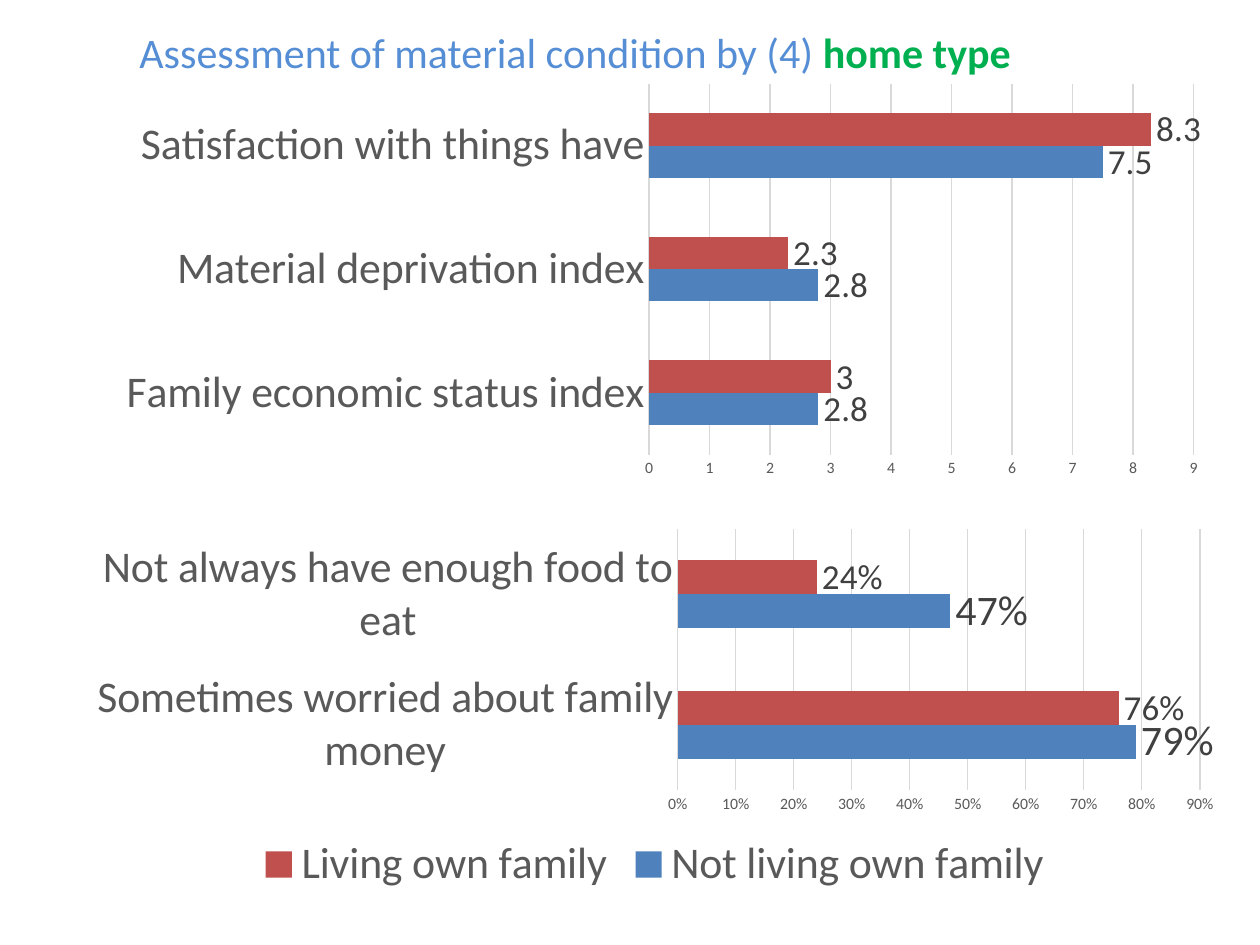
from lxml import etree
from pptx import Presentation
from pptx.chart import data as cd
from pptx.dml.color import RGBColor
from pptx.enum import chart as ce, text as te
from pptx.oxml.ns import qn
from pptx.util import Inches, Pt

FACE = "Calibri"
SKY = RGBColor(0x55, 0x8E, 0xD5)
GREEN = RGBColor(0x00, 0xB0, 0x50)
BLUE = RGBColor(0x4F, 0x81, 0xBD)
RED = RGBColor(0xC0, 0x50, 0x4D)
GREY = RGBColor(0x59, 0x59, 0x59)
DARK = RGBColor(0x40, 0x40, 0x40)
PALE = RGBColor(0xD9, 0xD9, 0xD9)


def style(font, size, color, bold=False):
    """Set the face, size, colour and weight of a font."""
    font.name, font.size, font.bold = FACE, Pt(size), bold
    font.color.rgb = color


def add_text(par, words, **look):
    """Add a formatted run to a paragraph."""
    run = par.add_run()
    run.text = words
    style(run.font, **look)


def place(shape, box):
    """Move a shape to a box given in inches."""
    shape.left, shape.top, shape.width, shape.height = map(Inches, box)


def add_title(slide, box):
    """Fill the title placeholder with its two-colour heading."""
    title = slide.shapes.title
    place(title, box)
    frame = title.text_frame
    frame.word_wrap = True
    frame.auto_size = te.MSO_AUTO_SIZE.NONE
    frame.vertical_anchor = te.MSO_ANCHOR.BOTTOM
    par = frame.paragraphs[0]
    par.alignment = te.PP_ALIGN.CENTER
    add_text(par, "Assessment of material condition by (4) ", size=24, color=SKY)
    add_text(par, "home type", size=24, color=GREEN, bold=True)


def fix_plot(chart, area):
    """Pin the inner plot area to fractions of the chart."""
    plot = chart._chartSpace.chart.plotArea
    for old in plot.findall(qn("c:layout")):
        plot.remove(old)
    layout = etree.Element(qn("c:layout"))
    plot.insert(0, layout)
    manual = etree.SubElement(layout, qn("c:manualLayout"))
    pairs = [("layoutTarget", "inner"), ("xMode", "edge"), ("yMode", "edge")]
    for tag, val in pairs + list(zip("xywh", area)):
        etree.SubElement(manual, qn("c:" + tag)).set("val", str(val))


def add_bars(slide, box, cats, series, area, top, step, fmt="General", legend=False):
    """Add a clustered bar chart of (name, values, colour, label size) series."""
    data = cd.CategoryChartData(number_format=fmt)
    data.categories = cats
    for name, vals, _, _ in series:
        data.add_series(name, vals)
    kind = ce.XL_CHART_TYPE.BAR_CLUSTERED
    chart = slide.shapes.add_chart(kind, *map(Inches, box), data).chart
    chart.font.name, chart.font.size = FACE, Pt(10)
    chart.has_title = False
    chart.has_legend = legend
    if legend:
        chart.legend.position = ce.XL_LEGEND_POSITION.BOTTOM
        chart.legend.include_in_layout = False
        style(chart.legend.font, 25, GREY)
    cat, val = chart.category_axis, chart.value_axis
    for axis, size in ((cat, 25), (val, 9)):
        axis.major_tick_mark = axis.minor_tick_mark = ce.XL_TICK_MARK.NONE
        style(axis.tick_labels.font, size, GREY)
    val.has_major_gridlines = True
    for line in (cat.format.line, val.major_gridlines.format.line):
        line.color.rgb, line.width = PALE, Pt(0.75)
    val.format.line.fill.background()
    val.minimum_scale, val.maximum_scale, val.major_unit = 0, top, step
    val.tick_labels.number_format = fmt
    val.tick_labels.number_format_is_linked = False
    plot = chart.plots[0]
    plot.gap_width, plot.overlap = 182, 0
    plot.vary_by_categories = False
    for bars, (_, _, color, size) in zip(plot.series, series):
        bars.format.fill.solid()
        bars.format.fill.fore_color.rgb = color
        labels = bars.data_labels
        labels.show_value = True
        labels.position = ce.XL_LABEL_POSITION.OUTSIDE_END
        labels.number_format = fmt
        labels.number_format_is_linked = False
        style(labels.font, size, DARK)
    fix_plot(chart, area)


def main():
    """Build and save the slide."""
    deck = Presentation()
    deck.slide_width, deck.slide_height = Inches(10), Inches(7.5)
    slide = deck.slides.add_slide(deck.slide_layouts[5])
    add_title(slide, (-0.03, 0.13, 9.19, 0.53))
    add_bars(
        slide, (0.83, 0.6, 8.82, 3.27),
        ["Family economic status index", "Material deprivation index",
         "Satisfaction with things have"],
        [("Series 1", (2.8, 2.8, 7.5), BLUE, 20),
         ("Series 2", (3, 2.3, 8.3), RED, 20)],
        area=(0.49, 0.02, 0.49, 0.9), top=9, step=1)
    add_bars(
        slide, (0.59, 4.14, 9.21, 3),
        ["Sometimes worried about family money",
         "Not always have enough food to eat"],
        [("Not living own family", (0.79, 0.47), BLUE, 24),
         ("Living own family", (0.76, 0.24), RED, 20)],
        area=(0.52, 0.02, 0.45, 0.69), top=0.9, step=0.1, fmt="0%", legend=True)
    deck.save("out.pptx")


if __name__ == "__main__":
    main()
